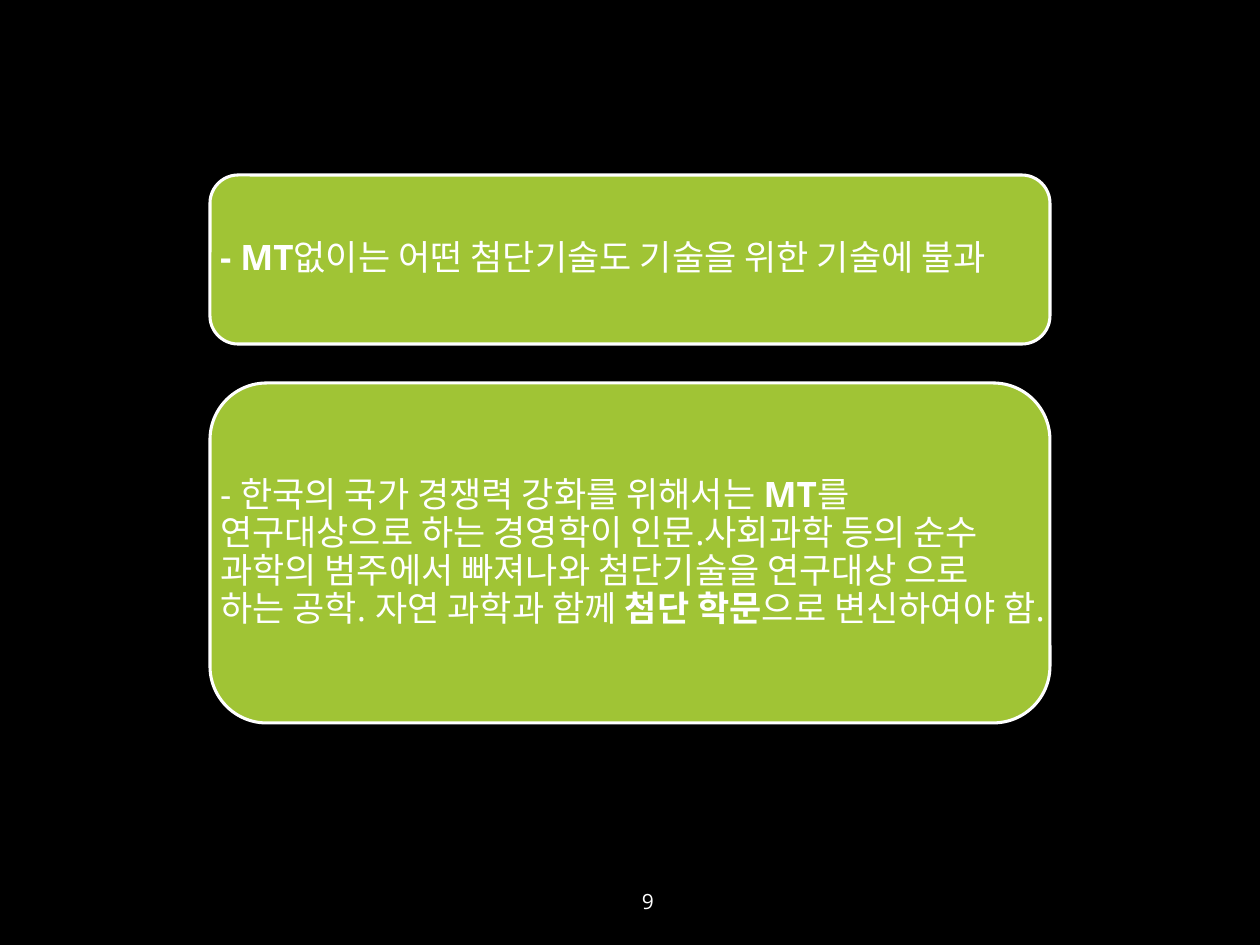
from dataclasses import dataclass

from pptx import Presentation
from pptx.dml.color import RGBColor
from pptx.enum.shapes import MSO_SHAPE
from pptx.enum.text import MSO_ANCHOR, PP_ALIGN
from pptx.util import Emu, Pt

ROUNDED = MSO_SHAPE.ROUNDED_RECTANGLE
MIDDLE = MSO_ANCHOR.MIDDLE
LEFT, CENTER = PP_ALIGN.LEFT, PP_ALIGN.CENTER
PIXELS_PER_INCH = 126
BLANK_LAYOUT = 6


@dataclass(frozen=True)
class Theme:
    background: RGBColor = RGBColor(0x00, 0x00, 0x00)
    panel: RGBColor = RGBColor(0xA0, 0xC4, 0x35)
    light: RGBColor = RGBColor(0xFF, 0xFF, 0xFF)
    font: str = "Open Sans"
    statement_size: int = 20
    number_size: int = 12
    outline: float = 1.75


THEME = Theme()
PANEL_LEFT, PANEL_WIDTH, PANEL_INSET = 210, 840, 10

# Each statement: top, height, and (text, bold) runs.
STATEMENTS = [
    (175, 169, [
        ("- MT", True),
        ("없이는 어떤 첨단기술도 기술을 위한 기술에 불과", False),
    ]),
    (383, 340, [
        ("- 한국의 국가 경쟁력 강화를 위해서는 ", False),
        ("MT", True),
        ("를 연구대상으로 하는 경영학이 인문.사회과학 등의 순수 과학의 "
         "범주에서 빠져나와 첨단기술을 연구대상 으로 하는 공학. "
         "자연 과학과 함께 ", False),
        ("첨단 학문", True),
        ("으로 변신하여야 함.", False),
    ]),
]


def px(length):
    return Emu(round(length * 914400 / PIXELS_PER_INCH))


def add_text(shapes, box, runs, size, alignment):
    """Add a wrapped, vertically centred text box and return it."""
    text_box = shapes.add_textbox(*map(px, box))
    frame = text_box.text_frame
    frame.word_wrap = True
    frame.vertical_anchor = MIDDLE
    paragraph = frame.paragraphs[0]
    paragraph.alignment = alignment
    paragraph.font.name = THEME.font
    paragraph.font.size = Pt(size)
    paragraph.font.color.rgb = THEME.light
    for text, bold in runs:
        run = paragraph.add_run()
        run.text = text
        run.font.bold = bold
    return text_box


def add_panel(shapes, box):
    panel = shapes.add_shape(ROUNDED, *map(px, box))
    panel.shadow.inherit = False
    panel.fill.solid()
    panel.fill.fore_color.rgb = THEME.panel
    panel.line.color.rgb = THEME.light
    panel.line.width = Pt(THEME.outline)


def add_statement(shapes, top, height, runs):
    """Add a panel with its text across the full panel width."""
    box = (PANEL_LEFT, top, PANEL_WIDTH, height)
    add_panel(shapes, box)
    text_box = add_text(shapes, box, runs, THEME.statement_size, LEFT)
    frame = text_box.text_frame
    frame.margin_left = frame.margin_right = px(PANEL_INSET)
    frame.margin_top = frame.margin_bottom = px(PANEL_INSET)
    paragraph = frame.paragraphs[0]
    paragraph.line_spacing = 0.9
    paragraph.space_after = Pt(7)


def main():
    presentation = Presentation()
    presentation.slide_width = px(1260)
    presentation.slide_height = px(945)
    slide = presentation.slides.add_slide(presentation.slide_layouts[BLANK_LAYOUT])
    slide.background.fill.solid()
    slide.background.fill.fore_color.rgb = THEME.background

    statement_group = slide.shapes.add_group_shape()
    for top, height, runs in STATEMENTS:
        add_statement(statement_group.shapes, top, height, runs)
    add_text(slide.shapes, (571, 876, 154, 50), [("9", False)],
             THEME.number_size, CENTER)

    presentation.save("out.pptx")


if __name__ == "__main__":
    main()
